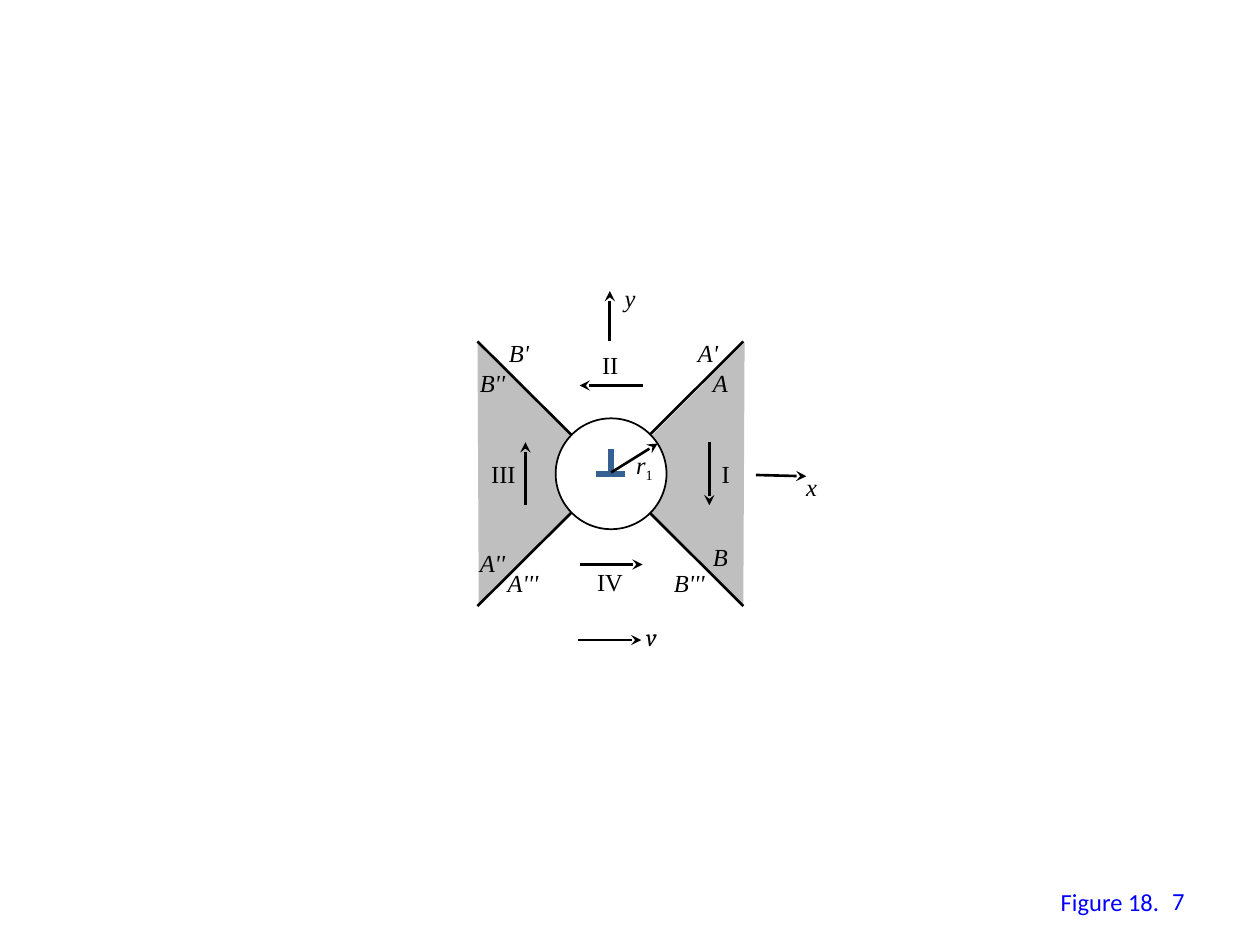
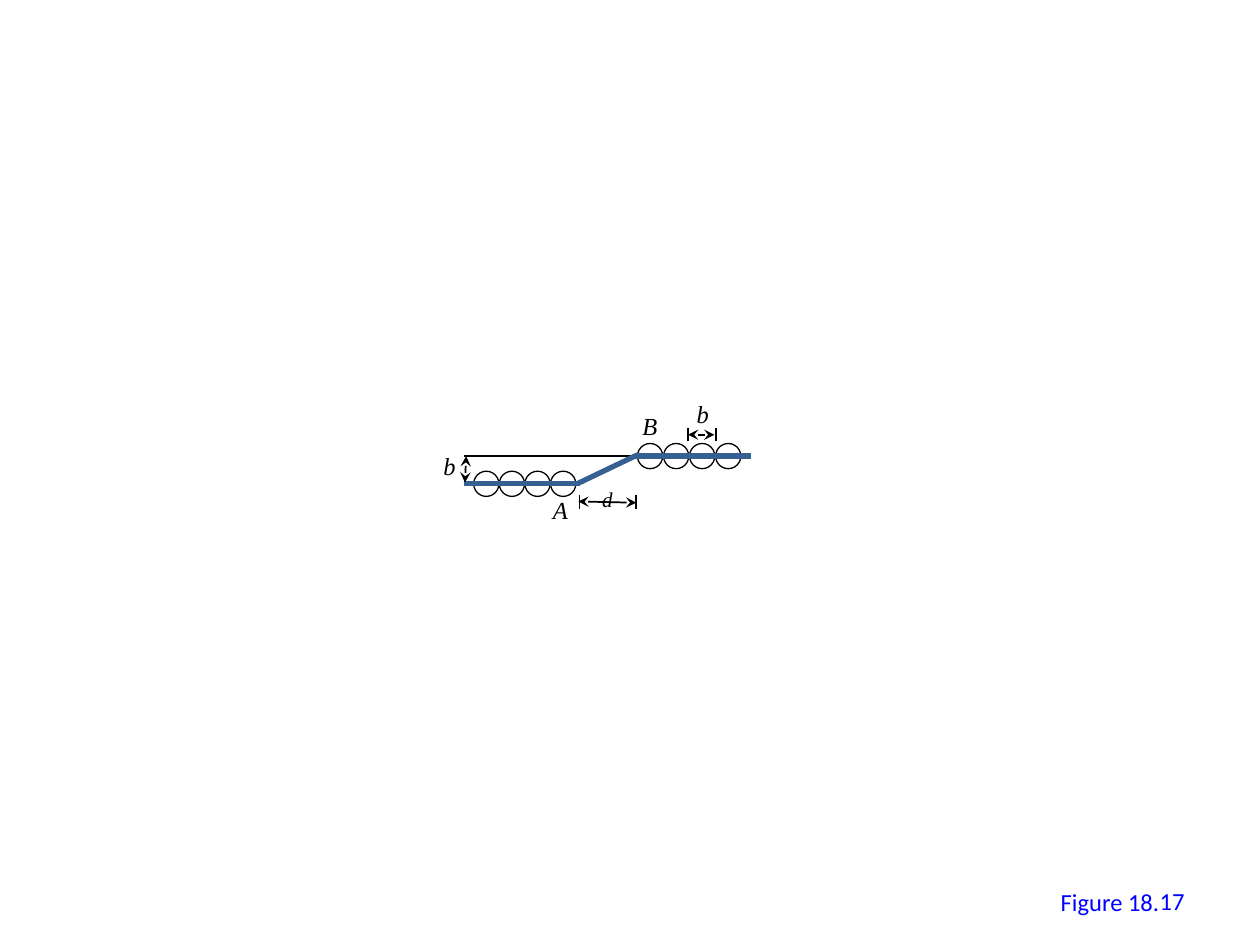
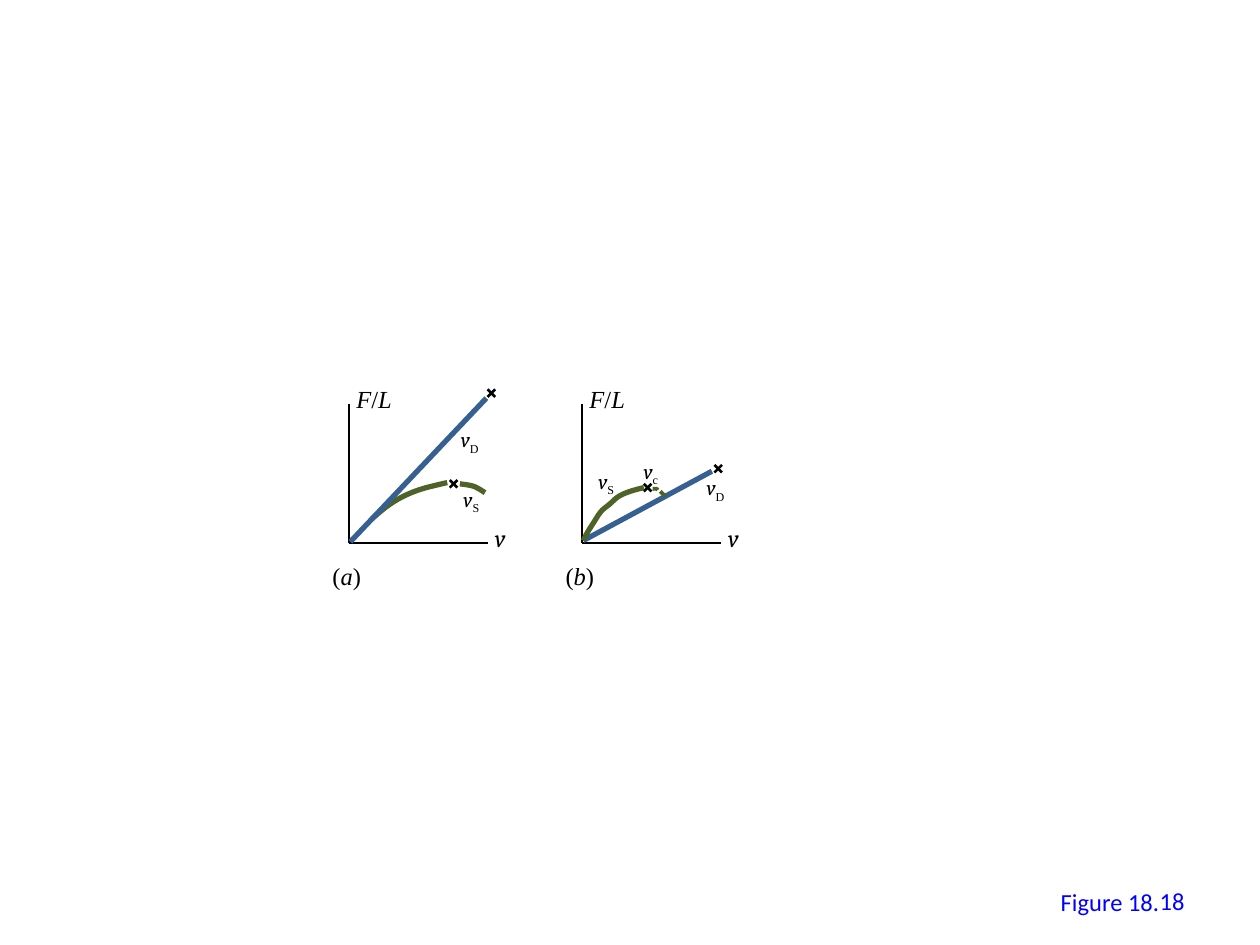
from lxml.etree import SubElement
from pptx import Presentation
from pptx.dml.color import RGBColor
from pptx.enum.dml import MSO_LINE
from pptx.enum.shapes import MSO_CONNECTOR, MSO_SHAPE
from pptx.enum.text import MSO_ANCHOR, MSO_AUTO_SIZE, PP_ALIGN
from pptx.oxml.ns import qn
from pptx.util import Pt

PX = 9144
SLIDE_SIZE = (1000, 750)
CURVE_STEPS = 6
COLORS = {"ink": "000000", "paper": "FFFFFF", "shade": "BFBFBF",
          "blue": "376092", "green": "4F6228", "caption": "0000FF"}

TYPE = {
    "symbol": {"name": "Times New Roman", "italic": True},
    "plain": {"name": "Times New Roman", "italic": False},
    "sub": {"name": "Times New Roman", "italic": False},
    "speed": {"name": "Cambria", "italic": True},
    "caption": {"name": "Calibri"},
}
LABEL_HEIGHTS = {14: 34, 12: 30}

STROKES = {
    "thin": {"color": "ink", "width": 1},
    "bold": {"color": "ink", "width": 1.5},
    "arrow": {"color": "ink", "width": 1.5, "ends": ["tailEnd"]},
    "span": {"color": "ink", "width": 1, "ends": ["headEnd", "tailEnd"]},
    "core": {"color": "blue", "width": 3.5},
    "dislocation": {"color": "blue", "width": 3},
    "screw": {"color": "green", "width": 3},
    "screw dashed": {"color": "green", "width": 2.25, "dash": MSO_LINE.SQUARE_DOT},
}

RIGHT_SECTOR = [(591, 272), (508, 355), (510, 403), (590, 481)]
LEFT_SECTOR = [(970 - x, y - 1) for x, y in RIGHT_SECTOR]

QUADRANTS = [
    ("area", "shade", RIGHT_SECTOR),
    ("area", "shade", LEFT_SECTOR),
    ("stroke", "bold", [(379, 481), (590, 271)]),
    ("stroke", "bold", [(590, 481), (379, 271)]),
    ("circle", 441, 332, 88, 1, "paper"),
    ("stroke", "arrow", [(600, 377), (640, 378)]),
    ("stroke", "arrow", [(484, 271), (484, 231)]),
    ("stroke", "core", [(473, 376), (496, 376)]),
    ("stroke", "core", [(485, 376), (485, 356)]),
    ("stroke", "arrow", [(485, 375), (522, 352)]),
    ("stroke", "arrow", [(563, 351), (563, 401)]),
    ("stroke", "arrow", [(417, 401), (417, 351)]),
    ("stroke", "arrow", [(510, 306), (460, 306)]),
    ("stroke", "arrow", [(460, 448), (510, 448)]),
    ("stroke", "arrow", [(459, 508), (509, 508)]),
    ("label", 556, 287, 37, 14, [("symbol", "A")]),
    ("label", 371, 287, 47, 14, [("symbol", "B''")]),
    ("label", 544, 263, 42, 14, [("symbol", "A'")]),
    ("label", 394, 263, 42, 14, [("symbol", "B'")]),
    ("label", 556, 425, 37, 14, [("symbol", "B")]),
    ("label", 525, 446, 51, 14, [("symbol", "B'''")]),
    ("label", 371, 430, 47, 14, [("symbol", "A''")]),
    ("label", 393, 446, 51, 14, [("symbol", "A'''")]),
    ("label", 630, 370, 34, 14, [("symbol", "x")]),
    ("label", 486, 220, 34, 14, [("symbol", "y")]),
    ("label", 563, 359, 27, 14, [("plain", "I")]),
    ("label", 380, 359, 40, 14, [("plain", "III")]),
    ("label", 468, 273, 33, 14, [("plain", "II")]),
    ("label", 464, 445, 41, 14, [("plain", "IV")]),
    ("label", 503, 489, 35, 14, [("speed", "v")]),
    ("label", 495, 352, 39, 14, [("symbol", "r"), ("sub", "1")]),
]

KINK = [
    ("stroke", "thin", [(508, 362), (368, 362)]),
    ("circle row", 376, 437, 374, 4, 20),
    ("circle row", 506, 568, 352, 4, 20),
    ("stroke", "dislocation", [(368, 384), (460, 384)]),
    ("stroke", "dislocation", [(504, 362), (596, 362)]),
    ("stroke", "dislocation", [(506, 361), (458, 384)]),
    ("stroke", "thin", [(460, 404), (460, 393)]),
    ("stroke", "thin", [(505, 404), (505, 393)]),
    ("stroke", "thin", [(546, 350), (546, 340)]),
    ("stroke", "thin", [(568, 350), (568, 340)]),
    ("stroke", "span", [(459, 398), (505, 399)]),
    ("stroke", "span", [(369, 383), (370, 362)]),
    ("stroke", "span", [(567, 345), (546, 345)]),
    ("label", 429, 388, 37, 14, [("symbol", "A")]),
    ("label", 500, 321, 37, 14, [("symbol", "B")]),
    ("label", 342, 353, 35, 14, [("symbol", "b")]),
    ("label", 543, 312, 35, 14, [("symbol", "b")]),
    ("label", 468, 381, 33, 12, [("symbol", "d")]),
]

FORCE_CURVES = [
    ("axes", 277, "a"),
    ("stroke", "screw", [(355, 383), (335, 388), (320, 394), (307, 402), (295, 412)]),
    ("stroke", "dislocation", [(278, 430), (386, 316)]),
    ("stroke", "screw", [(385, 391), (376, 386), (365, 384)]),
    ("cross", 390, 312),
    ("cross", 360, 384),
    ("label", 356, 334, 41, 12, [("speed", "v"), ("sub", "D")]),
    ("label", 358, 381, 39, 12, [("speed", "v"), ("sub", "S")]),
    ("axes", 462, "b"),
    ("cross", 570, 372),
    ("cross", 514, 387),
    ("stroke", "dislocation", [(463, 429), (565, 374)]),
    ("stroke", "screw", [(511, 387), (500, 390), (491, 394), (484, 400),
                         (477, 406), (471, 415), (466, 423), (463, 429)]),
    ("stroke", "screw dashed", [(522, 389), (521, 388), (518, 388)]),
    ("stroke", "screw dashed", [(528, 394), (526, 392), (524, 390)]),
    ("label", 551, 372, 41, 12, [("speed", "v"), ("sub", "D")]),
    ("label", 465, 367, 39, 12, [("speed", "v"), ("sub", "S")]),
    ("label", 501, 359, 38, 12, [("speed", "v"), ("sub", "c")]),
]

FIGURES = [("7", QUADRANTS), ("17", KINK), ("18", FORCE_CURVES)]


def emu(*lengths):
    return [round(length * PX) for length in lengths]


def rgb(color):
    return RGBColor.from_string(COLORS[color])


def add_runs(paragraph, size, runs, color):
    for style, text in runs:
        run = paragraph.add_run()
        run.text = text
        run.font.size = Pt(size)
        run.font.color.rgb = rgb(color)
        for attribute, value in TYPE[style].items():
            setattr(run.font, attribute, value)
        if style == "sub":
            run._r.get_or_add_rPr().set("baseline", "-25000")


def label(slide, left, top, width, size, runs, color="ink"):
    box = slide.shapes.add_textbox(*emu(left, top, width, LABEL_HEIGHTS[size]))
    box.text_frame.word_wrap = False
    box.text_frame.auto_size = MSO_AUTO_SIZE.SHAPE_TO_FIT_TEXT
    add_runs(box.text_frame.paragraphs[0], size, runs, color)


def page_number(slide, number):
    frame = slide.shapes.add_textbox(*emu(717, 695, 233, 40)).text_frame
    frame.word_wrap = True
    frame.vertical_anchor = MSO_ANCHOR.MIDDLE
    frame.paragraphs[0].alignment = PP_ALIGN.RIGHT
    add_runs(frame.paragraphs[0], 14, [("caption", number)], "caption")


def freeform(slide, points, close):
    start, *rest = [emu(*point) for point in points]
    builder = slide.shapes.build_freeform(*start, scale=1.0)
    builder.add_line_segments(rest, close=close)
    outline = builder.convert_to_shape()
    outline.shadow.inherit = False
    return outline


def area(slide, color, corners):
    sector = freeform(slide, corners, True)
    sector.fill.solid()
    sector.fill.fore_color.rgb = rgb(color)
    sector.line.fill.background()


def smooth_points(nodes):
    padded = [nodes[0], *nodes, nodes[-1]]
    points = [nodes[0]]
    for a, b, c, d in zip(padded, padded[1:], padded[2:], padded[3:]):
        for step in range(1, CURVE_STEPS + 1):
            t = step / CURVE_STEPS
            points.append([
                q + t * (r - p + t * (2 * p - 5 * q + 4 * r - s
                                      + t * (3 * q - p - 3 * r + s))) / 2
                for p, q, r, s in zip(a, b, c, d)])
    return points


def stroke(slide, style, points):
    look = STROKES[style]
    if len(points) == 2:
        path = slide.shapes.add_connector(
            MSO_CONNECTOR.STRAIGHT, *emu(*points[0], *points[1]))
    else:
        path = freeform(slide, smooth_points(points), False)
        path.fill.background()
    path.line.color.rgb = rgb(look["color"])
    path.line.width = Pt(look["width"])
    if "dash" in look:
        path.line.dash_style = look["dash"]
    for end in look.get("ends", []):
        SubElement(path.line._get_or_add_ln(), qn(f"a:{end}"), type="stealth")
    if len(points) == 2:
        SubElement(path._element.spPr, qn("a:effectLst"))


def circle(slide, left, top, size, width, fill=None):
    ring = slide.shapes.add_shape(MSO_SHAPE.OVAL, *emu(left, top, size, size))
    ring.shadow.inherit = False
    ring.line.color.rgb = rgb("ink")
    ring.line.width = Pt(width)
    if fill:
        ring.fill.solid()
        ring.fill.fore_color.rgb = rgb(fill)
    else:
        ring.fill.background()


def circle_row(slide, first, last, top, count, size):
    for index in range(count):
        left = first + (last - first) * index / (count - 1)
        circle(slide, left, top, size, 0.75)


def cross(slide, x, y, reach=3):
    for rise in (-reach, reach):
        stroke(slide, "bold", [(x - reach, y - rise), (x + reach, y + rise)])


def axes(slide, x, letter):
    stroke(slide, "bold", [(x + 110, 431), (x, 431)])
    stroke(slide, "bold", [(x, 321), (x, 431)])
    label(slide, x - 4, 300, 54, 14, [("symbol", "F"), ("plain", "/"), ("symbol", "L")])
    label(slide, x + 106, 410, 35, 14, [("speed", "v")])
    label(slide, x - 23, 440, 43, 14, [("plain", "("), ("symbol", letter), ("plain", ")")])


DRAW = {"area": area, "stroke": stroke, "circle": circle, "circle row": circle_row,
        "cross": cross, "axes": axes, "label": label}


def main():
    deck = Presentation()
    deck.slide_width, deck.slide_height = emu(*SLIDE_SIZE)
    for number, parts in FIGURES:
        slide = deck.slides.add_slide(deck.slide_layouts[6])
        label(slide, 832, 699, 99, 14, [("caption", "Figure 18.")], "caption")
        for kind, *details in parts:
            DRAW[kind](slide, *details)
        page_number(slide, number)
    deck.save("out.pptx")


if __name__ == "__main__":
    main()
